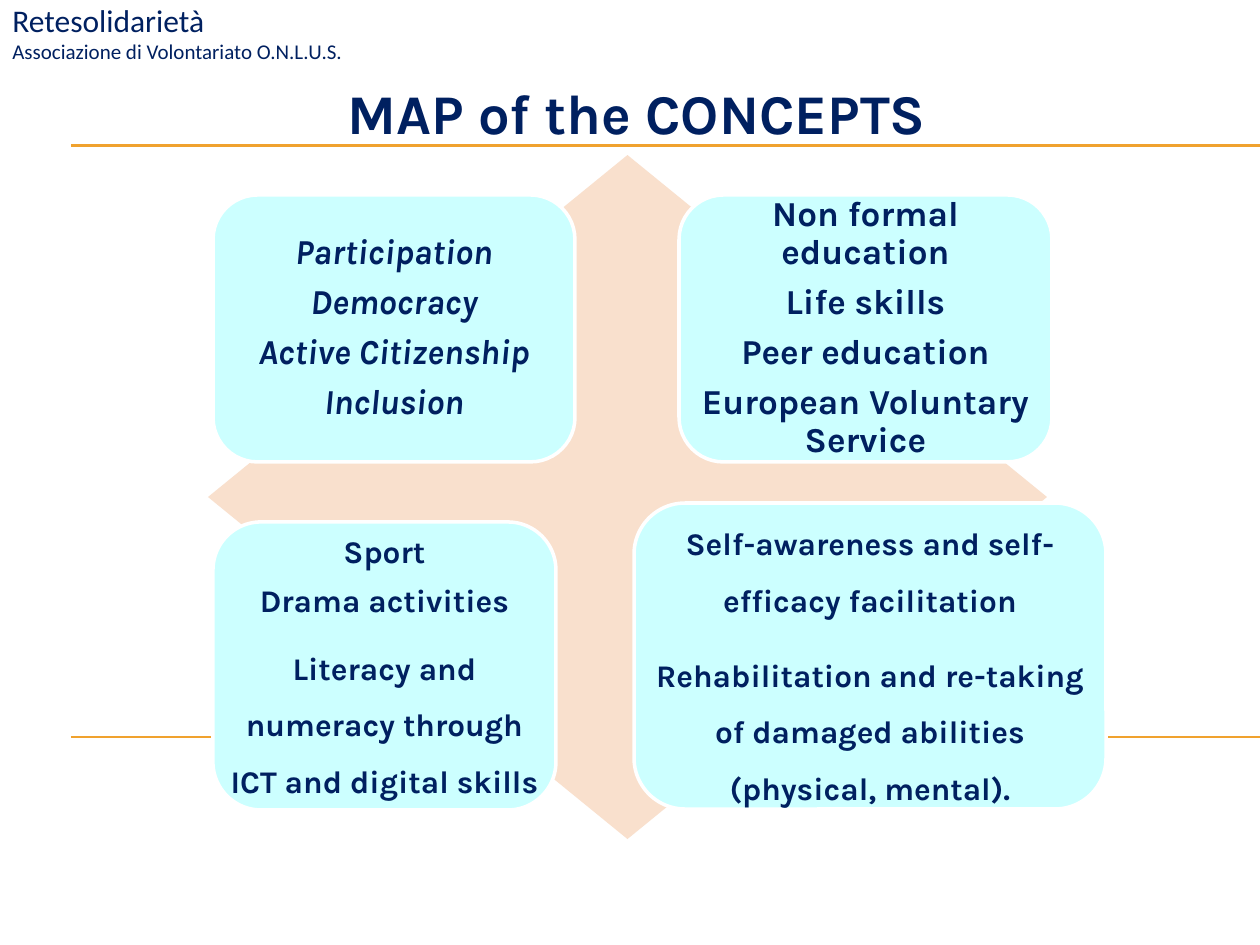
from pptx import Presentation, util as u
from pptx.dml.color import RGBColor
from pptx.enum import shapes, text
from pptx.oxml.ns import qn
from lxml import etree

SCALE = 914400 / 126  # EMU per px
COLORS = {"navy": "002060", "aqua": "CCFFFF", "peach": "F9E0CD",
          "gold": "F0A22E", "white": "FFFFFF"}


def px(n):
    return u.Emu(round(n * SCALE))


def rgb(name):
    return RGBColor.from_string(COLORS[name])


def style(p, size, font="Karla", bold=True, italic=False):
    f = p.font
    f.name, f.size, f.bold, f.italic = font, u.Pt(size), bold, italic
    f.color.rgb = rgb("navy")


def add_box(s, box, kind, fill, line=None):
    sp = s.shapes.add_shape(kind, *map(px, box))
    sp.shadow.inherit = False
    sp.fill.solid()
    sp.fill.fore_color.rgb = rgb(fill)
    if line:
        sp.line.color.rgb = rgb(line)
        sp.line.width = u.Pt(2)
    else:
        sp.line.fill.background()
    return sp


def add_text(s, box, anchor):
    tf = s.shapes.add_textbox(*map(px, box)).text_frame
    tf.word_wrap = True
    tf.vertical_anchor = anchor
    return tf


def rules(s, left, right, tops):
    for y in tops:
        c = s.shapes.add_connector(shapes.MSO_CONNECTOR.STRAIGHT,
                                   px(left), px(y), px(right), px(y))
        c.line.color.rgb = rgb("gold")
        c.line.width = u.Pt(0.75)
        etree.SubElement(c._element.spPr, qn("a:effectLst"))


def header(s, box):
    tf = add_text(s, box, text.MSO_ANCHOR.MIDDLE)
    lines = [("Retesolidarietà", 18), ("Associazione di Volontariato O.N.L.U.S.", 12)]
    for i, (words, size) in enumerate(lines):
        p = tf.add_paragraph() if i else tf.paragraphs[0]
        p.text = words
        style(p, size, "Calibri", bold=False)


def title(s, box):
    p = add_text(s, box, text.MSO_ANCHOR.BOTTOM).paragraphs[0]
    p.text = "MAP of the CONCEPTS"
    p.alignment = text.PP_ALIGN.CENTER
    style(p, 32)


def concept(s, box, size, lines, italic=False):
    """Rounded card; each line is (words, line spacing, points after)."""
    sp = add_box(s, box, shapes.MSO_SHAPE.ROUNDED_RECTANGLE, "aqua", "white")
    tf = sp.text_frame
    tf.word_wrap = True
    tf.vertical_anchor = text.MSO_ANCHOR.MIDDLE
    tf.margin_left = tf.margin_right = tf.margin_top = tf.margin_bottom = 0
    for i, (words, spacing, after) in enumerate(lines):
        p = tf.add_paragraph() if i else tf.paragraphs[0]
        p.text = words
        p.alignment = text.PP_ALIGN.CENTER
        p.line_spacing = spacing
        p.space_after = u.Pt(after)
        style(p, size, italic=italic)


def concept_map(s, box):
    x, y, w, h = box
    add_box(s, box, shapes.MSO_SHAPE.DIAMOND, "peach")
    # Cards: offset in the map, font size, lines, italic
    cards = [
        ((5, 40, 362, 267), 20,
         [(t, 0.9, 7) for t in ("Participation", "Democracy",
                                "Active Citizenship", "Inclusion")], True),
        ((471, 40, 373, 267), 20,
         [(t, 0.9, 7) for t in ("Non formal education", "Life skills", "Peer education",
                                "European Voluntary Service")], False),
        ((5, 367, 343, 288), 18,
         [("Sport", 1.0, 6.3), ("Drama activities", 1.0, 6.3),
          ("Literacy and numeracy through ICT and digital skills", 1.5, 6.3)], False),
        ((426, 348, 472, 306), 18,
         [("Self-awareness and self-efficacy facilitation", 1.5, 10.3),
          ("Rehabilitation and re-taking of damaged abilities (physical, mental).",
           1.5, 6.3)], False),
    ]
    for (dx, dy, cw, ch), size, lines, italic in cards:
        concept(s, (x + dx, y + dy, cw, ch), size, lines, italic)


def main():
    prs = Presentation()
    prs.slide_width, prs.slide_height = px(1260), px(945)
    s = prs.slides.add_slide(prs.slide_layouts[6])
    rules(s, 71, 1260, (145, 146, 737))
    concept_map(s, (208, 155, 839, 684))
    title(s, (54, 26, 1166, 126))
    header(s, (0, -6, 372, 77))
    prs.save("out.pptx")


if __name__ == "__main__":
    main()
